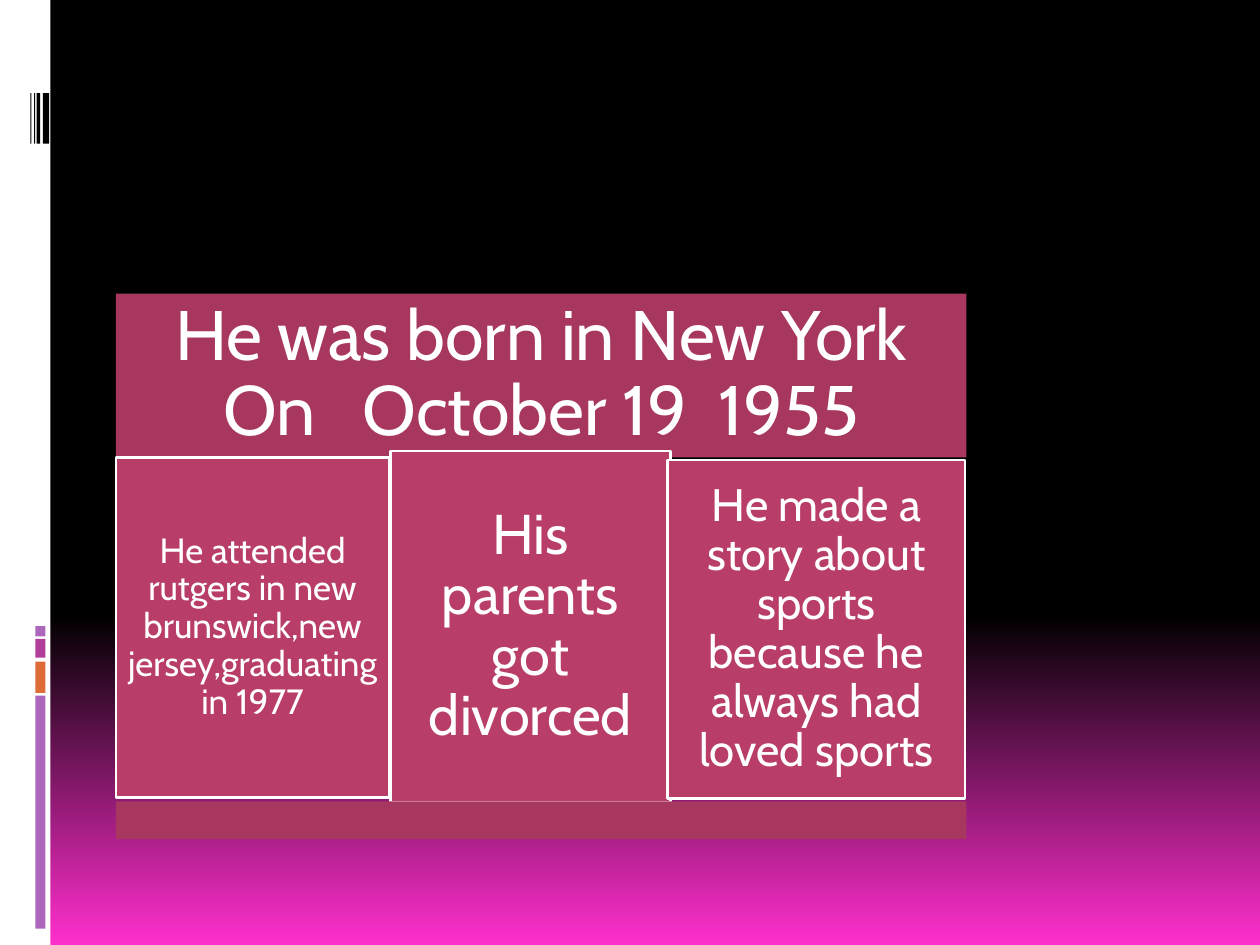
from dataclasses import dataclass

from pptx import Presentation
from pptx.dml.color import RGBColor
from pptx.enum.shapes import MSO_SHAPE
from pptx.enum.text import MSO_ANCHOR, PP_ALIGN
from pptx.util import Inches, Pt

RECTANGLE = MSO_SHAPE.RECTANGLE
MIDDLE = MSO_ANCHOR.MIDDLE
CENTER = PP_ALIGN.CENTER

FONT = "Cabin"
WHITE, BLACK = "FFFFFF", "000000"
PURPLE, ORANGE, MAGENTA = "AC66BB", "DE6C36", "B13F9A"
BAND_COLOR, CARD_COLOR = "A7375E", "B83D68"
BAND_LEFT, BAND_WIDTH = 0.92, 6.75


@dataclass
class Block:
    left: float
    top: float
    width: float
    height: float
    fill: str
    line: str = ""
    text: str = ""
    size: int = 0
    inset: float = 0


SIDEBAR = Block(0, 0, 0.4, 7.5, WHITE)

ACCENTS = [
    Block(0.28, top, 0.08, height, color)
    for top, height, color in [
        (5.52, 1.85, PURPLE),
        (5.25, 0.25, ORANGE),
        (5.07, 0.15, MAGENTA),
        (4.97, 0.08, PURPLE),
    ]
]

STRIPES = [
    Block(left, 0.74, width, 0.4, BLACK)
    for left, width in [(0.34, 0.05), (0.29, 0.03), (0.27, 0.01), (0.24, 0.01)]
]

HEADING = Block(
    BAND_LEFT, 2.33, BAND_WIDTH, 1.3, BAND_COLOR,
    text="He was born in New York On   October 19  1955", size=40, inset=0.17,
)

CARDS = [
    Block(
        0.92, 3.63, 2.17, 2.7, CARD_COLOR, WHITE,
        "He attended rutgers in new brunswick,new jersey,graduating in 1977",
        20, 0.08,
    ),
    Block(
        3.1, 3.58, 2.22, 2.79, CARD_COLOR, WHITE,
        "His parents got divorced", 32, 0.13,
    ),
    Block(
        5.3, 3.65, 2.36, 2.69, CARD_COLOR, WHITE,
        "He made a story about sports because he always had loved sports",
        26, 0.11,
    ),
]

FOOTER = Block(BAND_LEFT, 6.36, BAND_WIDTH, 0.3, BAND_COLOR)


def rgb(value: str) -> RGBColor:
    return RGBColor.from_string(value)


def set_background(slide) -> None:
    """Black down to 65 % of the height, then fading to pink."""
    fill = slide.background.fill
    fill.gradient()
    fill.gradient_angle = 270
    for stop, position, color in zip(
        fill.gradient_stops, (0.65, 1), (BLACK, "FF2FCD")
    ):
        stop.position = position
        stop.color.rgb = rgb(color)


def write_text(shape, block: Block) -> None:
    frame = shape.text_frame
    frame.word_wrap = True
    frame.vertical_anchor = MIDDLE
    frame.margin_left = frame.margin_right = Inches(block.inset)
    frame.margin_top = frame.margin_bottom = Inches(block.inset)
    paragraph = frame.paragraphs[0]
    paragraph.alignment = CENTER
    paragraph.line_spacing = 0.9
    run = paragraph.add_run()
    run.text = block.text
    run.font.name = FONT
    run.font.size = Pt(block.size)
    run.font.color.rgb = rgb(WHITE)


def draw_block(slide, block: Block) -> None:
    shape = slide.shapes.add_shape(
        RECTANGLE,
        Inches(block.left), Inches(block.top),
        Inches(block.width), Inches(block.height),
    )
    shape.shadow.inherit = False
    shape.fill.solid()
    shape.fill.fore_color.rgb = rgb(block.fill)
    if block.line:
        shape.line.color.rgb = rgb(block.line)
        shape.line.width = Pt(1.5)
    else:
        shape.line.fill.background()
    if block.text:
        write_text(shape, block)


def main() -> None:
    presentation = Presentation()
    presentation.slide_width = Inches(10)
    presentation.slide_height = Inches(7.5)
    blank_layout = presentation.slide_layouts[6]
    slide = presentation.slides.add_slide(blank_layout)
    set_background(slide)
    for block in [SIDEBAR, *ACCENTS, *STRIPES, HEADING, *CARDS, FOOTER]:
        draw_block(slide, block)
    presentation.save("out.pptx")


if __name__ == "__main__":
    main()
